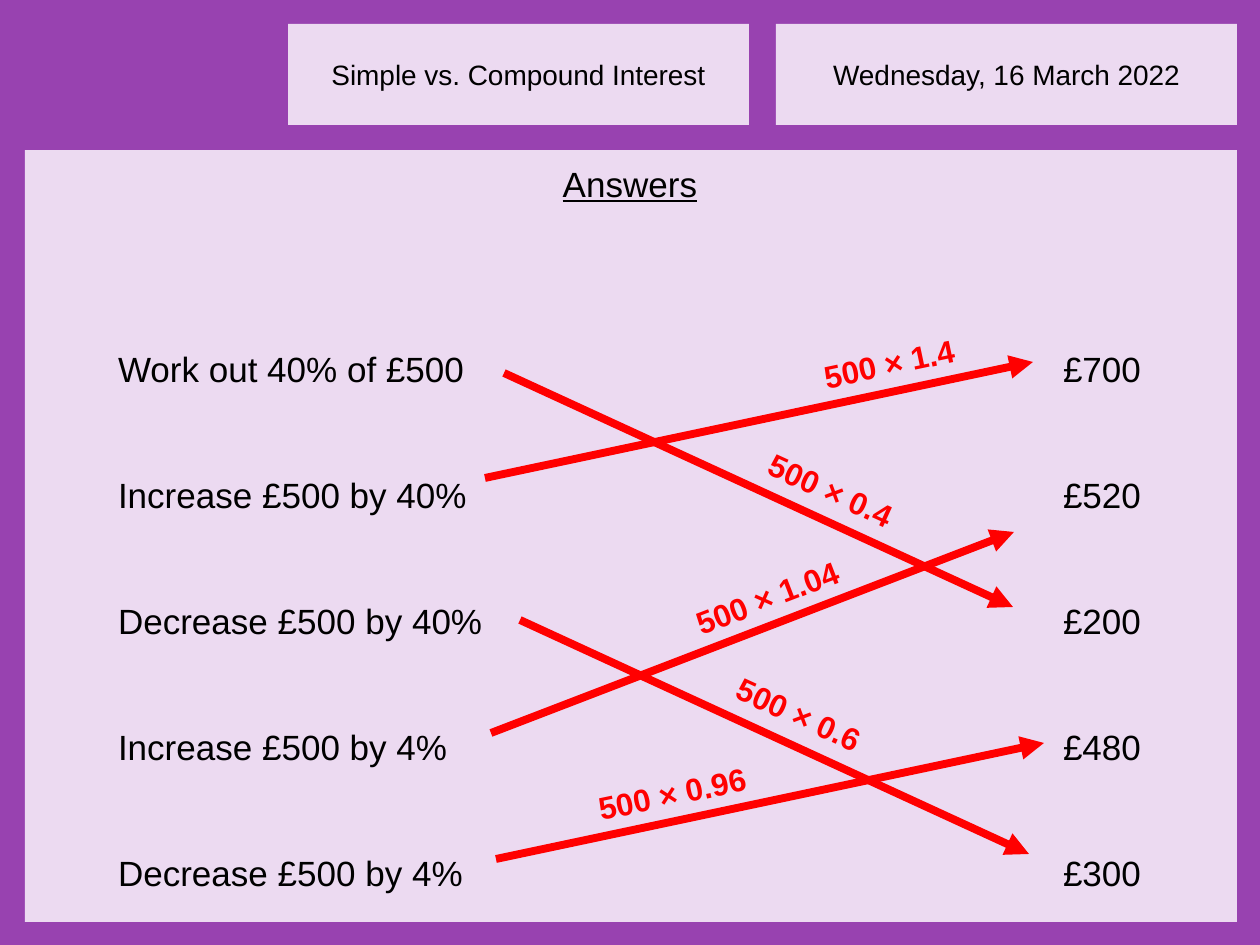
from math import atan2, degrees
from lxml.etree import SubElement as Sub
from pptx import Presentation
from pptx.dml.color import RGBColor
from pptx.enum.shapes import MSO_CONNECTOR as Line, MSO_SHAPE as Shape
from pptx.enum.text import MSO_ANCHOR as Anchor, PP_ALIGN as Align
from pptx.oxml.ns import qn
from pptx.util import Emu, Pt

PURPLE, LILAC, BLACK, RED = "9842B0", "ECDAF1", "000000", "FF0000"

HEADS = [
    ("Simple vs. Compound Interest", 288),
    ("Wednesday, 16 March 2022", 776),
]
TITLE = "Answers"
ROWS = [
    ("Work out 40% of £500", "£700"),
    ("Increase £500 by 40%", "£520"),
    ("Decrease £500 by 40%", "£200"),
    ("Increase £500 by 4%", "£480"),
    ("Decrease £500 by 4%", "£300"),
]
# left edge and width of the question and answer columns
COLS = [(118, 380), (1063, 110)]
# label, arrow start, arrow end, label centre
LINKS = [
    ("500 × 0.4", (504, 373), (1013, 607), (831, 490)),
    ("500 × 1.4", (485, 478), (1033, 362), (889, 363)),
    ("500 × 0.6", (520, 620), (1029, 854), (799, 714)),
    ("500 × 1.04", (491, 733), (1014, 532), (767, 597)),
    ("500 × 0.96", (496, 859), (1044, 743), (672, 793)),
]


def px(n):
    return Emu(round(n * 914400 / 126))


def color(code):
    return RGBColor.from_string(code)


def style(par, size, code, align=Align.CENTER, bold=False):
    par.alignment = align
    for run in par.runs:
        font = run.font
        font.name, font.size, font.bold = "Arial", Pt(size), bold
        font.color.rgb = color(code)


def panel(x, y, w, h):
    box = slide.shapes.add_shape(Shape.RECTANGLE, px(x), px(y), px(w), px(h))
    box.shadow.inherit = False
    box.fill.solid()
    box.fill.fore_color.rgb = color(LILAC)
    box.line.fill.background()
    return box


def place(holder, x, y, w, h):
    # Bring the placeholder in front of the panels
    slide.shapes.element.append(holder.element)
    holder.left, holder.top, holder.width, holder.height = map(px, (x, y, w, h))
    frame = holder.text_frame
    frame.margin_left = frame.margin_right = 0
    frame.margin_top = frame.margin_bottom = 0
    frame.vertical_anchor = Anchor.TOP
    return frame


deck = Presentation()
deck.slide_width, deck.slide_height = px(1260), px(945)
slide = deck.slides.add_slide(deck.slide_layouts[3])
title, *bodies = list(slide.placeholders)
slide.background.fill.solid()
slide.background.fill.fore_color.rgb = color(PURPLE)

# Header and main panels
for text, x in HEADS:
    head = panel(x, 24, 461, 101)
    head.text_frame.text = text
    style(head.text_frame.paragraphs[0], 16, BLACK)
panel(25, 150, 1212, 772)

# Title
frame = place(title, 33, 162, 1194, 42)
frame.text = TITLE
style(frame.paragraphs[0], 20, BLACK)
frame.paragraphs[0].runs[0].font.underline = True

# Question and answer columns
for body, (x, w), texts in zip(bodies, COLS, zip(*ROWS)):
    frame = place(body, x, 347, w, 560)
    frame.text = "\n".join(texts)
    for i, par in enumerate(frame.paragraphs):
        props = par._p.get_or_add_pPr()
        props.set("marL", "0")
        props.set("indent", "0")
        Sub(props, qn("a:buNone"))
        par.space_before = Pt(48 if i else 0)
        style(par, 20, BLACK, Align.LEFT)

# Arrows, each with a label turned to its slope
for text, (x1, y1), (x2, y2), (cx, cy) in LINKS:
    arrow = slide.shapes.add_connector(Line.STRAIGHT, px(x1), px(y1), px(x2), px(y2))
    arrow.line.color.rgb = color(RED)
    arrow.line.width = Pt(4.5)
    Sub(arrow.line._get_or_add_ln(), qn("a:tailEnd"), type="triangle")
    Sub(arrow.element.spPr, qn("a:effectLst"))

    label = slide.shapes.add_textbox(px(cx - 175), px(cy - 25), px(350), px(50))
    label.rotation = degrees(atan2(y2 - y1, x2 - x1))
    label.text_frame.word_wrap = True
    label.text_frame.text = text
    style(label.text_frame.paragraphs[0], 18, RED, bold=True)

deck.save("out.pptx")
